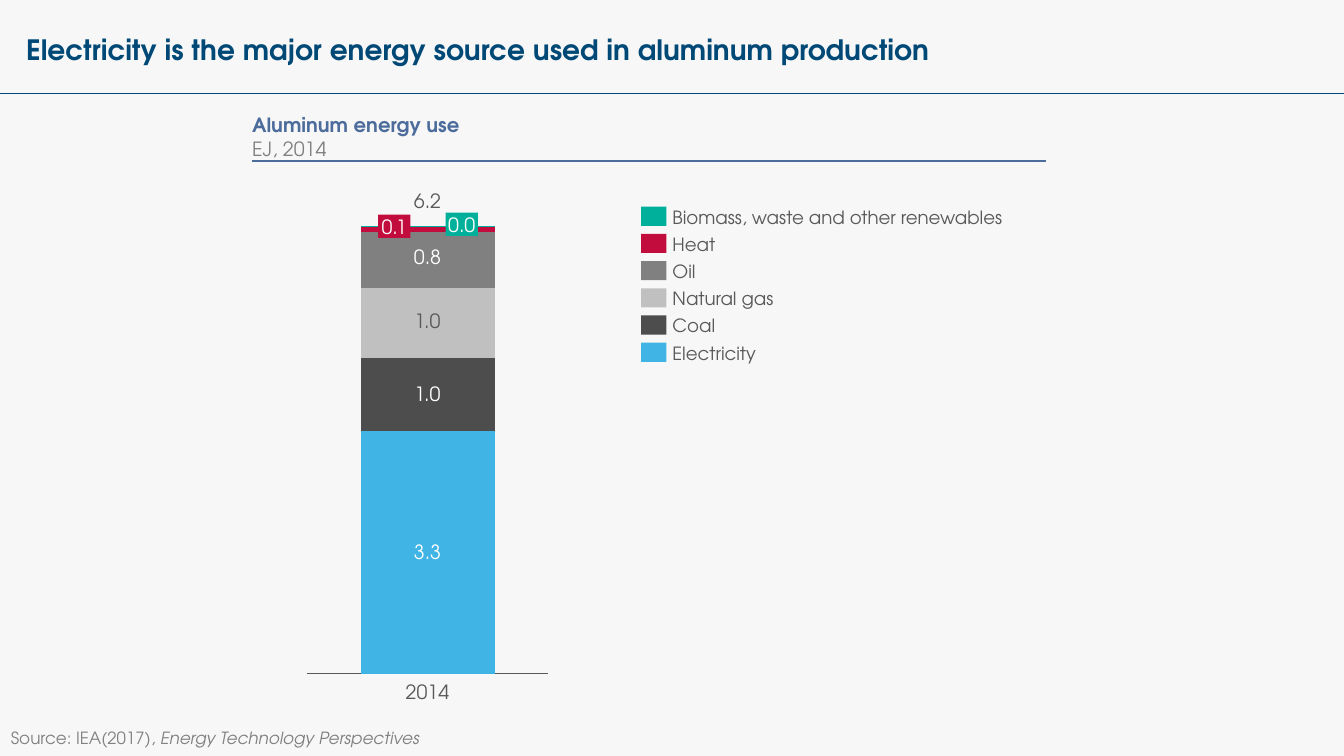
"""Build a slide on the energy sources used in aluminum production."""
from lxml.etree import SubElement
from pptx import Presentation
from pptx.chart.data import CategoryChartData
from pptx.dml.color import RGBColor
from pptx.enum.chart import XL_CHART_TYPE as ChartType, XL_TICK_LABEL_POSITION as LabelPosition
from pptx.enum.chart import XL_TICK_MARK as TickMark
from pptx.enum.shapes import MSO_CONNECTOR as Connector, MSO_SHAPE as Shape
from pptx.enum.text import MSO_ANCHOR as Anchor, MSO_AUTO_SIZE as AutoSize, PP_ALIGN as Align
from pptx.oxml.ns import qn
from pptx.util import Inches, Pt

FONT = "TeX Gyre Adventor"
NAVY, BLUE, TEXT, GRAY, WHITE = "004876", "4C6C9C", "595959", "808080", "FFFFFF"
TEAL, RED = "00B09A", "C30C3E"
SOURCES = [
    ("Electricity", 100, "40B4E5"),
    ("Coal", 30, "4D4D4D"),
    ("Natural gas", 29, "C0C0C0"),
    ("Oil", 23, GRAY),
    ("Heat", 2, RED),
    ("Biomass, waste and other renewables", 0.5, TEAL),
]
BAR_LABELS = [
    ("6.2", 4.08, 1.88, TEXT, None),
    ("0.0", 4.42, 2.11, WHITE, TEAL),
    ("0.1", 3.75, 2.13, WHITE, RED),
    ("0.8", 4.08, 2.43, WHITE, None),
    ("1.0", 4.08, 3.07, TEXT, None),
    ("1.0", 4.08, 3.79, WHITE, None),
    ("3.3", 4.08, 5.36, WHITE, None),
]


def rgb(color):
    """Turn a hex string into a colour."""
    return RGBColor.from_string(color)


def style_font(font, size, color, bold=False):
    """Set the face, size, colour and weight of a font."""
    font.name, font.size, font.bold = FONT, Pt(size), bold
    font.color.rgb = rgb(color)


def set_frame(frame, anchor=Anchor.MIDDLE, wrap=False, insets=(0, 0, 0, 0)):
    """Set the anchor, wrapping and insets of a text frame."""
    frame.word_wrap, frame.vertical_anchor = wrap, anchor
    frame.auto_size = AutoSize.NONE
    (frame.margin_left, frame.margin_top,
     frame.margin_right, frame.margin_bottom) = map(Inches, insets)


def add_text(slide, text, box, size, color, align=Align.LEFT):
    """Add a text box of one paragraph."""
    shape = slide.shapes.add_textbox(*map(Inches, box))
    set_frame(shape.text_frame)
    paragraph = shape.text_frame.paragraphs[0]
    paragraph.text, paragraph.alignment = text, align
    style_font(paragraph.font, size, color)
    return shape


def add_swatch(slide, box, color):
    """Add a filled legend rectangle without outline."""
    shape = slide.shapes.add_shape(Shape.RECTANGLE, *map(Inches, box))
    shape.shadow.inherit = False
    shape.fill.solid()
    shape.fill.fore_color.rgb = rgb(color)
    shape.line.fill.background()


def add_rule(slide, left, right, top, color, width):
    """Add a horizontal line."""
    rule = slide.shapes.add_connector(
        Connector.STRAIGHT, Inches(left), Inches(top), Inches(right), Inches(top))
    rule.line.color.rgb, rule.line.width = rgb(color), Pt(width)
    SubElement(rule._element.spPr, qn("a:effectLst"))


def add_title(slide, text):
    """Place and format the slide title."""
    title = slide.shapes.title
    title.left, title.top, title.width, title.height = map(Inches, (0.26, 0.32, 11, 0.34))
    set_frame(title.text_frame, wrap=True)
    paragraph = title.text_frame.paragraphs[0]
    paragraph.text, paragraph.alignment = text, Align.LEFT
    style_font(paragraph.font, 20, NAVY, bold=True)


def add_heading(slide):
    """Add the chart heading, its unit line and the rule below."""
    box = slide.shapes.add_textbox(*map(Inches, (2.5, 1.12, 7.87, 0.49)))
    frame = box.text_frame
    set_frame(frame, Anchor.BOTTOM, True, (0, 0, 0, 0.02))
    frame.text = "Aluminum energy use\nEJ, 2014"
    heading, unit = frame.paragraphs
    style_font(heading.font, 14, BLUE, bold=True)
    style_font(unit.font, 14, GRAY)
    add_rule(slide, 2.5, 10.37, 1.6, BLUE, 1.5)


def set_plot_layout(chart, **fractions):
    """Fix the inner plot area as fractions of the chart."""
    plot_area = chart._chartSpace.chart.plotArea
    layout = plot_area.find(qn("c:layout"))
    if layout is None:
        layout = SubElement(plot_area, qn("c:layout"))
        plot_area.insert(0, layout)
    manual = SubElement(layout, qn("c:manualLayout"))
    settings = {"layoutTarget": "inner", "xMode": "edge", "yMode": "edge", **fractions}
    for name, value in settings.items():
        SubElement(manual, qn(f"c:{name}")).set("val", str(value))


def add_energy_chart(slide):
    """Add the stacked column of energy sources."""
    data = CategoryChartData()
    data.categories = ["2014"]
    for name, value, _ in SOURCES:
        data.add_series(name, [value])
    chart = slide.shapes.add_chart(
        ChartType.COLUMN_STACKED, *map(Inches, (2.96, 2.14, 2.57, 4.64)), data).chart
    style_font(chart.font, 10, TEXT)
    chart.has_legend = chart.has_title = False
    set_plot_layout(chart, x=0.035, y=0.019, w=0.93, h=0.961)
    plot = chart.plots[0]
    plot.gap_width, plot.overlap, plot.vary_by_categories = 80, 100, False
    for series, (_, _, color) in zip(plot.series, SOURCES):
        series.format.fill.solid()
        series.format.fill.fore_color.rgb = rgb(color)
    category_axis, value_axis = chart.category_axis, chart.value_axis
    category_axis.tick_label_position = LabelPosition.NONE
    category_axis.major_tick_mark = category_axis.minor_tick_mark = TickMark.NONE
    category_axis.format.line.color.rgb = rgb(TEXT)
    category_axis.format.line.width = Pt(0.75)
    value_axis.minimum_scale, value_axis.maximum_scale = 0, 185
    value_axis.has_major_gridlines = value_axis.visible = False


def add_bar_labels(slide):
    """Add the values on the column and the year below it."""
    for text, left, top, color, fill in BAR_LABELS:
        label = add_text(slide, text, (left, top, 0.32, 0.23), 14, color, Align.CENTER)
        if fill:
            label.fill.solid()
            label.fill.fore_color.rgb = rgb(fill)
    add_text(slide, "2014", (4.02, 6.75, 0.44, 0.23), 14, TEXT, Align.CENTER)


def add_legend(slide):
    """Add the legend from the top of the column down."""
    for row, (name, _, color) in enumerate(reversed(SOURCES)):
        top = 2.05 + 0.27 * row
        add_swatch(slide, (6.36, top, 0.25, 0.19), color)
        add_text(slide, name, (6.67, top - 0.01, 3.3, 0.22), 13, TEXT)


def add_source(slide):
    """Add the source line with its italic publication title."""
    box = slide.shapes.add_textbox(*map(Inches, (0.01, 7.17, 12.88, 0.3)))
    set_frame(box.text_frame, Anchor.TOP, True, (0.1, 0.05, 0.1, 0.05))
    paragraph = box.text_frame.paragraphs[0]
    style_font(paragraph.font, 12, GRAY)
    paragraph.add_run().text = "Source: IEA(2017), "
    publication = paragraph.add_run()
    publication.text = "Energy Technology Perspectives"
    publication.font.italic = True


def main():
    """Build and save the presentation."""
    presentation = Presentation()
    presentation.slide_width, presentation.slide_height = Inches(13.33), Inches(7.5)
    slide = presentation.slides.add_slide(presentation.slide_layouts[5])
    slide.background.fill.solid()
    slide.background.fill.fore_color.rgb = rgb("F7F7F7")
    add_rule(slide, 0, 13.33, 0.93, NAVY, 0.75)
    add_title(slide, "Electricity is the major energy source used in aluminum production")
    add_heading(slide)
    add_energy_chart(slide)
    add_bar_labels(slide)
    add_legend(slide)
    add_source(slide)
    presentation.save("out.pptx")


if __name__ == "__main__":
    main()
